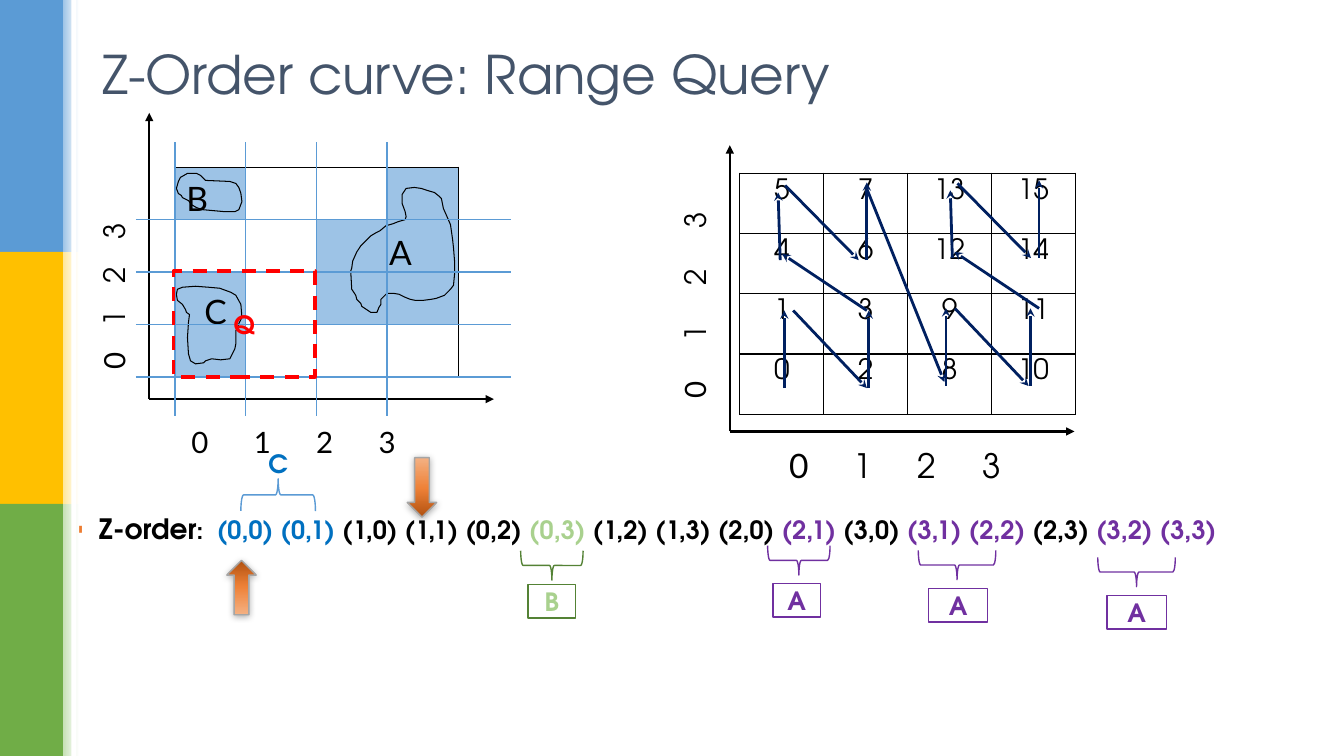
import copy
import pptx
import pptx.util
import pptx.dml.color
import pptx.enum.dml
import pptx.enum.shapes
import pptx.enum.text
import pptx.oxml.ns
from lxml import etree

Pt = pptx.util.Pt
RGB = pptx.dml.color.RGBColor
qn = pptx.oxml.ns.qn
SHAPE = pptx.enum.shapes.MSO_SHAPE
ALIGN = pptx.enum.text.PP_ALIGN
ANCHOR = pptx.enum.text.MSO_ANCHOR

BLACK, WHITE = RGB(0, 0, 0), RGB(255, 255, 255)
BLUE, SKY, INK = RGB(0x5B, 0x9B, 0xD5), RGB(0x9D, 0xC3, 0xE6), RGB(0x00, 0x70, 0xC0)
GOLD, CREAM = RGB(0xFF, 0xC0, 0x00), RGB(0xFF, 0xE6, 0x99)
GREEN, MINT = RGB(0x70, 0xAD, 0x47), RGB(0xC5, 0xE0, 0xB4)
DARK_GREEN, LIGHT_GREEN = RGB(0x54, 0x82, 0x35), RGB(0xA9, 0xD1, 0x8E)
PURPLE, NAVY, SLATE = RGB(0x70, 0x30, 0xA0), RGB(0x00, 0x20, 0x60), RGB(0x44, 0x54, 0x6A)
RED, GREY = RGB(255, 0, 0), RGB(0xA5, 0xA5, 0xA5)
RUST, ORANGE, PEACH = RGB(0xB0, 0x50, 0x0F), RGB(0xEE, 0x81, 0x37), RGB(0xF4, 0xB1, 0x83)
LATO, GYRE = "Lato", "TeX Gyre Adventor"


def child(parent, tag, **attrs):
    return etree.SubElement(parent, qn(tag), **attrs)


class Deck:
    def __init__(self):
        self.prs = pptx.Presentation()
        self.prs.slide_width, self.prs.slide_height = Pt(960), Pt(540)
        self.s = self.prs.slides.add_slide(self.prs.slide_layouts[1])

    def style(self, r, size, color=BLACK, font=GYRE, bold=False):
        r.font.size, r.font.name, r.font.bold = Pt(size), font, bold
        r.font.color.rgb = color

    def place(self, sp, x, y, w, h):
        sp.left, sp.top, sp.width, sp.height = Pt(x), Pt(y), Pt(w), Pt(h)

    def text(self, sp, text, size, color=BLACK, font=GYRE, bold=False,
             align=ALIGN.CENTER, anchor=ANCHOR.MIDDLE, inset=(0, 0)):
        tf = sp.text_frame
        tf.text, tf.word_wrap, tf.vertical_anchor = text, True, anchor
        tf.auto_size = pptx.enum.text.MSO_AUTO_SIZE.NONE
        tf.margin_left, tf.margin_top = Pt(inset[0]), Pt(inset[1])
        tf.margin_right = tf.margin_bottom = 0
        p = tf.paragraphs[0]
        p.alignment = align
        for r in p.runs:
            self.style(r, size, color, font, bold)
        return p

    def shape(self, kind, x, y, w, h, fill=None, line=None, weight=1, rot=0):
        sp = self.s.shapes.add_shape(kind, Pt(x), Pt(y), Pt(w), Pt(h))
        sp.shadow.inherit = False
        sp.rotation = rot
        self.paint(sp, fill, line, weight)
        return sp

    def paint(self, sp, fill, line, weight):
        if fill is None:
            sp.fill.background()
        else:
            sp.fill.solid()
            sp.fill.fore_color.rgb = fill
        if line is None:
            sp.line.fill.background()
        else:
            sp.line.color.rgb, sp.line.width = line, Pt(weight)

    def gradient(self, sp, angle, colors):
        sp.fill.gradient()
        sp.fill.gradient_angle = angle
        stops = sp._element.spPr.find(".//" + qn("a:gsLst"))
        for _ in colors[2:]:
            stops.append(copy.deepcopy(stops[0]))
        for stop, (position, color) in zip(sp.fill.gradient_stops, colors):
            stop.position, stop.color.rgb = position, color

    def line(self, x1, y1, x2, y2, color, weight=1, head=None):
        kind = pptx.enum.shapes.MSO_CONNECTOR.STRAIGHT
        c = self.s.shapes.add_connector(kind, Pt(x1), Pt(y1), Pt(x2), Pt(y2))
        c.line.color.rgb, c.line.width = color, Pt(weight)
        if head:
            child(c.line._get_or_add_ln(), "a:tailEnd", type=head)
        child(c._element.spPr, "a:effectLst")

    def axes(self, x, y):
        self.line(x, y, x + 246.2, y, BLACK, 1.75, "triangle")
        self.line(x, y, x, y - 204.5, BLACK, 1.75, "triangle")

    def axis_labels(self, x, y, w, inset, step, size=21, font=GYRE, rot=0):
        sp = self.shape(SHAPE.RECTANGLE, x, y, w, 36, WHITE, rot=rot)
        p = self.text(sp, "", size, align=ALIGN.LEFT, anchor=ANCHOR.TOP, inset=(inset, 3.6))
        tabs = child(p._p.get_or_add_pPr(), "a:tabLst")
        for i in (1, 2, 3):
            child(tabs, "a:tab", pos=str(Pt(step * i)), algn="l")
        for text, face in (("0", LATO), ("\t1\t2\t3", font)):
            r = p.add_run()
            r.text = text
            self.style(r, size, font=face)

    def grid(self, x, y, col, row, rows, fill_of):
        t = self.s.shapes.add_table(4, 4, Pt(x), Pt(y), Pt(4 * col), Pt(4 * row)).table
        t.first_row = t.horz_banding = False
        for i, values in enumerate(rows):
            t.rows[i].height, t.columns[i].width = Pt(row), Pt(col)
            for j, value in enumerate(values):
                cell = t.cell(i, j)
                fill = fill_of(value)
                if fill is None:
                    cell.fill.background()
                else:
                    cell.fill.solid()
                    cell.fill.fore_color.rgb = fill
                if isinstance(value, int):
                    cell.text = str(value)
                    p = cell.text_frame.paragraphs[0]
                    p.alignment = ALIGN.CENTER
                    self.style(p.runs[0], 20)
                tcPr = cell._tc.get_or_add_tcPr()
                for k, side in enumerate(("a:lnL", "a:lnR", "a:lnT", "a:lnB")):
                    ln = child(tcPr, side, w=str(Pt(1)))
                    child(child(ln, "a:solidFill"), "a:srgbClr", val=str(BLACK))
                    tcPr.insert(k, ln)

    def region(self, points, label, inset):
        # Points are in hundredths of an inch
        fb = self.s.shapes.build_freeform(*points[0], scale=Pt(0.72))
        fb.add_line_segments(points[1:], close=True)
        sp = fb.convert_to_shape()
        sp.shadow.inherit = False
        self.paint(sp, None, BLACK, 0.75)
        self.text(sp, label, 24, font=LATO, align=ALIGN.LEFT, anchor=ANCHOR.TOP, inset=inset)

    def brace(self, cx, cy, length, depth, color, rot=90):
        self.shape(SHAPE.RIGHT_BRACE, cx - depth / 2, cy - length / 2, depth, length,
                   line=color, rot=rot)

    def pointer(self, x, y, h, flip=False):
        sp = self.shape(SHAPE.DOWN_ARROW, x, y, 21, h, line=GREY)
        self.gradient(sp, 90, [(0, RUST), (0.48, ORANGE), (1, PEACH)])
        if flip:
            sp._element.spPr.xfrm.set("flipV", "1")
        effects = sp._element.spPr.find(qn("a:effectLst"))
        shadow = child(effects, "a:outerShdw", blurRad=str(Pt(5)), dist=str(Pt(1)), dir="5400000")
        child(child(shadow, "a:srgbClr", val=str(BLACK)), "a:alpha", val="32000")


d = Deck()

# Side bands
for i, (color, tint) in enumerate([(BLUE, SKY), (GOLD, CREAM), (GREEN, MINT)]):
    d.shape(SHAPE.RECTANGLE, 0, 180 * i, 45, 180, color)
    d.gradient(d.shape(SHAPE.RECTANGLE, 45, 180 * i, 11.5, 180), 0, [(0, tint), (1, WHITE)])
d.shape(SHAPE.RECTANGLE, 51, 0, 3.6, 540, WHITE)

# Title and the Z-order list
title, body = d.s.placeholders
d.place(title, 66, 11, 828, 79)
d.text(title, "Z-Order curve: Range Query", 38, SLATE, align=ALIGN.LEFT, inset=(7.2, 3.6))
d.place(body, 45.4, 364.3, 893, 152.6)
p = d.text(body, "", 18, align=ALIGN.LEFT, anchor=ANCHOR.TOP, inset=(7.2, 3.6))
p.line_spacing, p.space_before, p.space_after = 0.9, Pt(0), Pt(12)
pPr = p._p.get_or_add_pPr()
pPr.set("marL", str(Pt(18)))
pPr.set("indent", str(-Pt(18)))
child(child(pPr, "a:buClr"), "a:srgbClr", val="ED7D31")
child(pPr, "a:buChar", char="▪")
for text, size, color in [
        ("Z-order", 20, BLACK), (": ", 17, BLACK), ("(0,0) (0,1) ", 18, INK),
        ("(1,0) (1,1) (0,2) ", 18, BLACK), ("(0,3) ", 18, LIGHT_GREEN),
        ("(1,2) (1,3) (2,0) ", 18, BLACK), ("(2,1) ", 18, PURPLE), ("(3,0) ", 18, BLACK),
        ("(3,1) (2,2) ", 18, PURPLE), ("(2,3) ", 18, BLACK), ("(3,2) (3,3)", 18, PURPLE)]:
    r = p.add_run()
    r.text = text
    d.style(r, size, color, bold=True)
    if text == ": ":
        r.font._element.set("spc", "240")

# Left chart: covered cells, axes and regions
d.grid(124.6, 119.5, 50.7, 37.45, ["#..#", "..##", "#.##", "#..."],
       lambda mark: SKY if mark == "#" else None)
d.axes(106.6, 285.1)
d.axis_labels(129.6, 299.5, 192, 7.2, 44.6, font=LATO)
d.axis_labels(-13, 174.2, 192, 24, 31, rot=270)
d.region([(358, 244), (354, 250), (350, 259), (349, 266), (348, 269), (349, 287), (353, 293),
          (354, 297), (358, 301), (359, 304), (365, 308), (368, 310), (374, 310), (376, 305),
          (378, 302), (378, 297), (380, 295), (384, 291), (390, 291), (396, 292), (402, 295),
          (407, 297), (412, 298), (420, 298), (428, 297), (433, 296), (441, 293), (447, 287),
          (450, 283), (451, 272), (451, 259), (450, 246), (449, 237), (447, 223), (444, 216),
          (440, 207), (438, 197), (436, 195), (431, 191), (424, 189), (418, 187), (411, 186),
          (403, 187), (399, 193), (399, 202), (402, 210), (403, 215), (402, 218), (395, 220),
          (390, 222), (383, 224), (377, 229), (373, 231), (368, 234), (363, 239)],
         "A", (27.5, 32))
d.region([(181, 196), (187, 199), (190, 203), (195, 206), (201, 208), (223, 210), (233, 210),
          (237, 208), (240, 200), (239, 192), (237, 186), (234, 182), (228, 180), (204, 179),
          (201, 176), (199, 174), (195, 172), (186, 172), (179, 176), (177, 180), (175, 187),
          (177, 192), (180, 194)], "B", (7.2, 3.6))
d.region([(188, 312), (187, 320), (186, 335), (187, 351), (189, 358), (194, 361), (202, 360),
          (204, 358), (210, 356), (219, 357), (228, 356), (230, 352), (233, 346), (234, 341),
          (234, 328), (236, 325), (237, 321), (240, 315), (239, 302), (234, 293), (229, 290),
          (218, 286), (207, 285), (194, 284), (181, 285), (176, 287), (175, 292), (176, 298),
          (181, 302), (184, 307), (185, 310)], "C", (20, 3.6))
for i in range(4):
    d.line(125 + 50.5 * i, 101.5, 125 + 50.5 * i, 297, BLUE)
    d.line(97, 269.2 - 37.5 * i, 365, 269.2 - 37.5 * i, BLUE)

# Query window
query = d.shape(SHAPE.RECTANGLE, 124, 193.7, 101, 75.6, line=RED, weight=2.5)
query.line.dash_style = pptx.enum.dml.MSO_LINE.DASH
d.text(query, "Q", 18, RED, bold=True)

# Marks around the Z-order list
d.brace(198.7, 353.5, 53.3, 23, BLUE, rot=270)
label = d.s.shapes.add_textbox(Pt(172), Pt(318.2), Pt(53.3), Pt(26))
d.text(label, "C", 18, INK, bold=True)
for name, cx, cy, length, x, y, w, edge, color in [
        ("A", 811.8, 408.6, 55.4, 790.6, 425.5, 42.5, PURPLE, PURPLE),
        ("A", 683.6, 403.6, 55.4, 663.1, 420.5, 42.5, PURPLE, PURPLE),
        ("A", 570.6, 400.3, 44.6, 552.2, 416.9, 33.8, PURPLE, PURPLE),
        ("B", 394.2, 403.9, 44.6, 377.3, 417.6, 33.8, DARK_GREEN, LIGHT_GREEN)]:
    d.brace(cx, cy, length, 21, edge)
    d.text(d.shape(SHAPE.RECTANGLE, x, y, w, 23.8, line=edge), name, 18, color, bold=True)
d.pointer(290.9, 326.9, 42.5)
d.pointer(162, 400.3, 38.9, flip=True)

# Right chart: cell numbers and the curve
d.grid(528.5, 123.8, 59.9, 43.05,
       [(5, 7, 13, 15), (4, 6, 12, 14), (1, 3, 9, 11), (0, 2, 8, 10)], lambda number: WHITE)
d.axes(521.3, 308.2)
d.axis_labels(401.8, 193.7, 192, 23, 40.5, rot=270)
LOWER = [(560.2, 277.2, 560.2, 221.8), (566.6, 221.8, 619.2, 277.2),
         (620.6, 277.2, 620.6, 221.8)]
UPPER = [(619.2, 221.8, 558.7, 181.4), (557.3, 185.8, 555.8, 137.5),
         (560.9, 132.5, 613.4, 185.8), (619.2, 185.8, 619.2, 130.3)]
for half in (0, 1):
    for steps, shift in ((LOWER, 115.5), (UPPER, 123)):
        for x1, y1, x2, y2 in steps:
            dx, dy = half * shift, half * -1.5
            d.line(x1 + dx, y1 + dy, x2 + dx, y2 + dy, NAVY, 2, "stealth")
d.line(618.5, 133.2, 674.6, 272.9, NAVY, 2, "stealth")
d.axis_labels(538.6, 313.9, 229, 25, 46, size=24)

d.prs.save("out.pptx")
